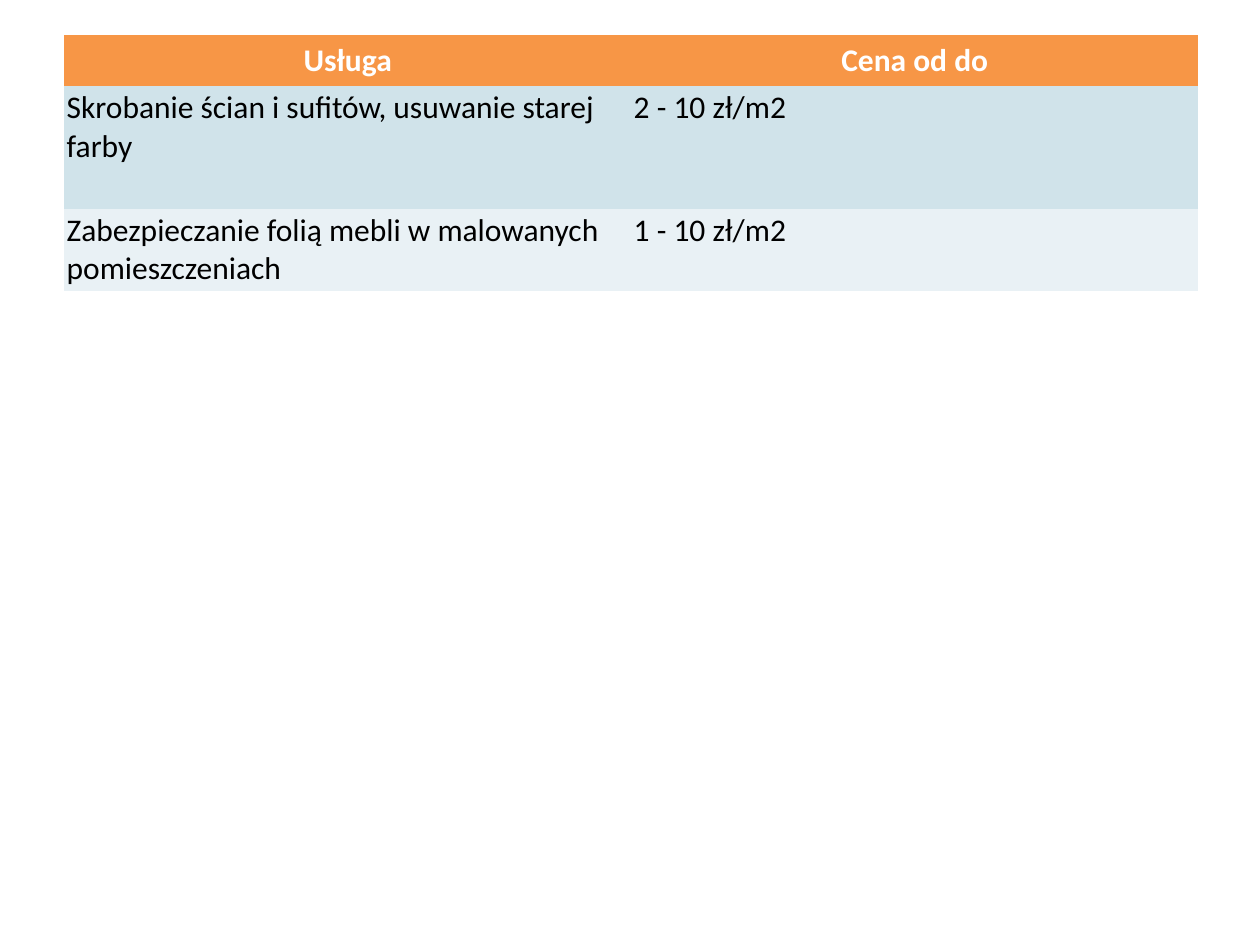
import pptx
import pptx.dml.color
import pptx.enum.text
import pptx.oxml.ns
import pptx.util

RGBColor = pptx.dml.color.RGBColor
Inches = pptx.util.Inches

ORANGE = RGBColor(0xF7, 0x96, 0x46)
BLUE_BAND = RGBColor(0xD0, 0xE3, 0xEA)
PALE_BAND = RGBColor(0xE9, 0xF1, 0xF5)
WHITE = RGBColor(0xFF, 0xFF, 0xFF)
BLACK = RGBColor(0x00, 0x00, 0x00)

FONT = "Calibri"
NO_GRID_STYLE = "{2D5ABB26-0587-4C30-8999-92F81FD0307C}"
SLIDE_WIDTH, SLIDE_HEIGHT = Inches(10), Inches(7.5)
BODY_MARGIN = Inches(0.02)

PRICES = [
    ("Usługa", "Cena od do"),
    ("Skrobanie ścian i sufitów, usuwanie starej farby", "2 - 10 zł/m2"),
    ("Zabezpieczanie folią mebli w malowanych pomieszczeniach", "1 - 10 zł/m2"),
]
ROW_FILLS = [ORANGE, BLUE_BAND, PALE_BAND]
ROW_SHARES = [0.2, 0.48, 0.32]


def fill_cell(cell, wording, fill, is_header):
    cell.fill.solid()
    cell.fill.fore_color.rgb = fill
    if not is_header:
        cell.margin_left = cell.margin_right = BODY_MARGIN
        cell.margin_top = cell.margin_bottom = BODY_MARGIN
    cell.text_frame.text = wording
    line = cell.text_frame.paragraphs[0]
    if is_header:
        line.alignment = pptx.enum.text.PP_ALIGN.CENTER
    font = line.runs[0].font
    font.name = FONT
    font.size = pptx.util.Pt(18)
    font.bold = is_header
    font.color.rgb = WHITE if is_header else BLACK


def add_price_list(slide, left, top, width, height):
    column_count = len(PRICES[0])
    price_list = slide.shapes.add_table(
        len(PRICES), column_count, left, top, width, height).table

    # Plain style without borders, so only the cell fills show
    style = price_list._tbl.tblPr.find(pptx.oxml.ns.qn("a:tableStyleId"))
    style.text = NO_GRID_STYLE

    for column in price_list.columns:
        column.width = width // column_count
    for r, (entry, fill, share) in enumerate(zip(PRICES, ROW_FILLS, ROW_SHARES)):
        price_list.rows[r].height = int(height * share)
        for c, wording in enumerate(entry):
            fill_cell(price_list.cell(r, c), wording, fill, is_header=r == 0)


def main():
    deck = pptx.Presentation()
    deck.slide_width, deck.slide_height = SLIDE_WIDTH, SLIDE_HEIGHT
    slide = deck.slides.add_slide(deck.slide_layouts.get_by_name("Blank"))

    # Services and their price ranges
    add_price_list(slide, Inches(0.51), Inches(0.28),
                   int(SLIDE_WIDTH * 0.9), int(SLIDE_HEIGHT * 0.27))
    deck.save("out.pptx")


if __name__ == "__main__":
    main()
